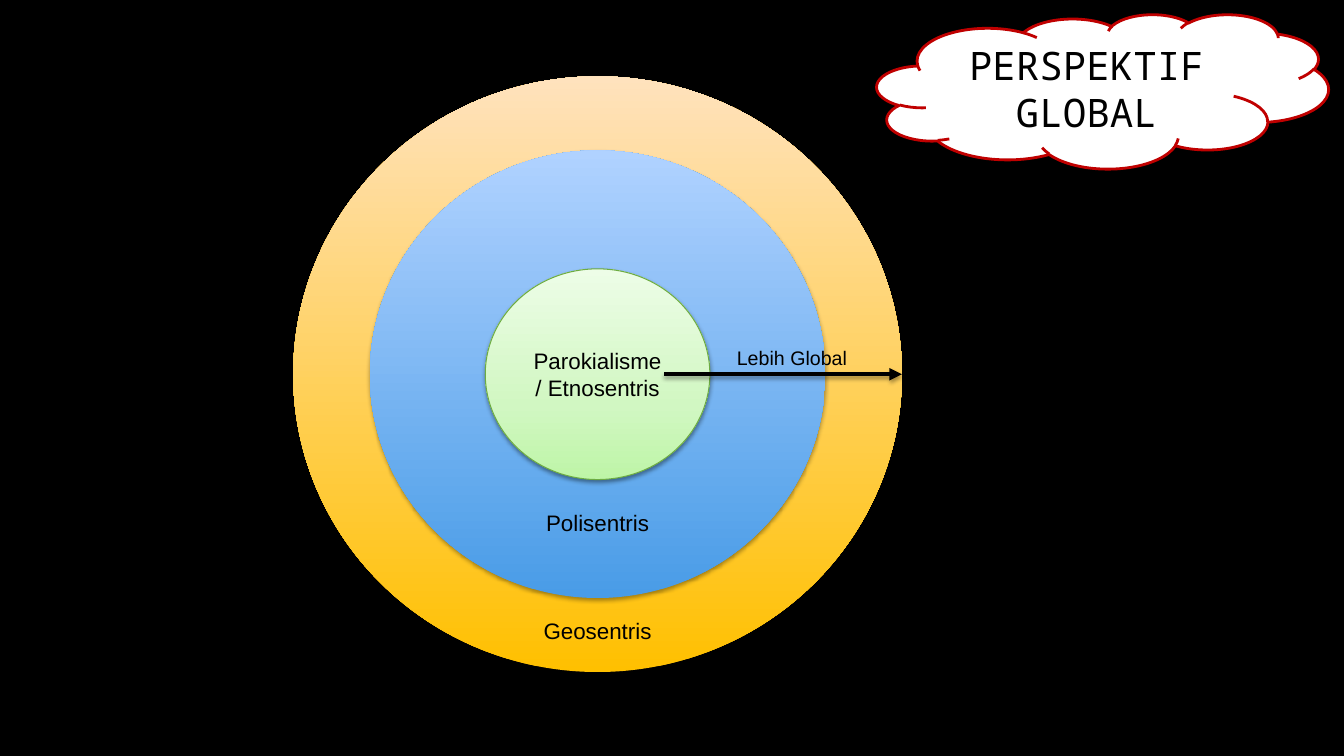
from copy import deepcopy
from pptx import Presentation, util as u
from pptx.dml.color import RGBColor
from pptx.enum import shapes, text
from pptx.oxml import parse_xml
from pptx.oxml.ns import nsdecls, qn

BLACK = RGBColor(0, 0, 0)
WHITE = RGBColor(255, 255, 255)
RED = RGBColor(0xC0, 0, 0)
GREEN = RGBColor(0x6D, 0xAC, 0x43)
GOLD = [(0, RGBColor(0xFF, 0xC0, 0)), (1, RGBColor(0xFF, 0xE2, 0xBD))]
BLUE = [(0, RGBColor(0x49, 0x9C, 0xE7)), (1, RGBColor(0xB0, 0xD2, 0xFF))]
LIME = [(0, RGBColor(0xBE, 0xF5, 0xA7)), (0.35, RGBColor(0xD1, 0xF7, 0xC2)),
        (1, RGBColor(0xED, 0xFD, 0xE7))]
MID_X, MID_Y = 15.06, 9.43


class Board:
    """Holds the style and the current slide."""

    font = "Arial"
    mono = "Noto Sans Mono"

    def __init__(self, deck):
        self.slide = deck.slides.add_slide(deck.slide_layouts[5])
        fill = self.slide.background.fill
        fill.solid()
        fill.fore_color.rgb = BLACK

    def box(self, left, top, width, height):
        return [u.Cm(n) for n in (left, top, width, height)]

    def letter(self, shape, words, size, font=None, wrap=True):
        frame = shape.text_frame
        frame.text = words
        frame.word_wrap = wrap
        frame.auto_size = text.MSO_AUTO_SIZE.NONE
        frame.vertical_anchor = text.MSO_ANCHOR.MIDDLE
        line = frame.paragraphs[0]
        line.alignment = text.PP_ALIGN.CENTER
        for run in line.runs:
            run.font.size = u.Pt(size)
            run.font.name = font or self.font
            run.font.color.rgb = BLACK

    def shade(self, shape, alpha=35):
        props = shape._element.spPr
        for old in props.findall(qn("a:effectLst")):
            props.remove(old)
        props.append(parse_xml(
            f'<a:effectLst {nsdecls("a")}><a:outerShdw blurRad="{u.Pt(3.1)}" '
            f'dist="{u.Pt(1.8)}" dir="5400000" rotWithShape="0">'
            f'<a:srgbClr val="000000"><a:alpha val="{alpha * 1000}"/>'
            '</a:srgbClr></a:outerShdw></a:effectLst>'))

    def ring(self, width, height, stops, edge=None, alpha=35):
        oval = self.slide.shapes.add_shape(
            shapes.MSO_SHAPE.OVAL,
            *self.box(MID_X - width / 2, MID_Y - height / 2, width, height))
        oval.fill.gradient()
        oval.fill.gradient_angle = 90
        parts = oval._element.spPr.find(qn("a:gradFill")).find(qn("a:gsLst"))
        while len(parts) < len(stops):
            parts.append(deepcopy(parts[0]))
        for part, (place, color) in zip(oval.fill.gradient_stops, stops):
            part.position = place
            part.color.rgb = color
        if edge:
            oval.line.color.rgb = edge
            oval.line.width = u.Pt(0.75)
        else:
            oval.line.fill.background()
        self.shade(oval, alpha)
        return oval

    def label(self, words, left, top, width, height, size):
        note = self.slide.shapes.add_textbox(*self.box(left, top, width, height))
        self.letter(note, words, size, wrap=False)
        return note

    def arrow(self, start, end, y):
        line = self.slide.shapes.add_connector(
            shapes.MSO_CONNECTOR.STRAIGHT,
            u.Cm(start), u.Cm(y), u.Cm(end), u.Cm(y))
        line.line.color.rgb = BLACK
        line.line.width = u.Pt(3)
        line.line._get_or_add_ln().append(
            parse_xml(f'<a:tailEnd {nsdecls("a")} type="triangle"/>'))
        self.shade(line)
        return line

    def cloud(self, left, top, width, height):
        puff = self.slide.shapes.add_shape(
            shapes.MSO_SHAPE.CLOUD, *self.box(left, top, width, height))
        puff.fill.solid()
        puff.fill.fore_color.rgb = WHITE
        puff.line.color.rgb = RED
        puff.line.width = u.Pt(2)
        puff.shadow.inherit = False

    def title(self, words, left, top, width, height):
        head = self.slide.shapes.title
        head.left, head.top, head.width, head.height = self.box(
            left, top, width, height)
        self.letter(head, words, 28, self.mono)
        self.slide.shapes._spTree.append(head._element)


def main():
    deck = Presentation()
    deck.slide_width, deck.slide_height = u.Cm(33.87), u.Cm(19.05)
    board = Board(deck)
    board.ring(15.34, 15.01, GOLD)
    board.ring(11.48, 11.28, BLUE)
    for words, y in (("Geosentris", 15.9), ("Polisentris", 13.17)):
        board.label(words, MID_X - 2, y - 0.5, 4, 1, 16)
    core = board.ring(5.66, 5.31, LIME, GREEN, 38)
    board.letter(core, "Parokialisme / Etnosentris", 16)
    arrow = board.arrow(16.74, 22.73, MID_Y)
    label = board.label("Lebih Global", 18.31, 8.59, 3.3, 0.86, 14)
    board.slide.shapes.add_group_shape([arrow, label])
    board.cloud(22.1, 0.36, 11.38, 3.89)
    board.title("PERSPEKTIF GLOBAL", 23.67, 0.95, 7.42, 2.53)
    deck.save("out.pptx")


if __name__ == "__main__":
    main()
